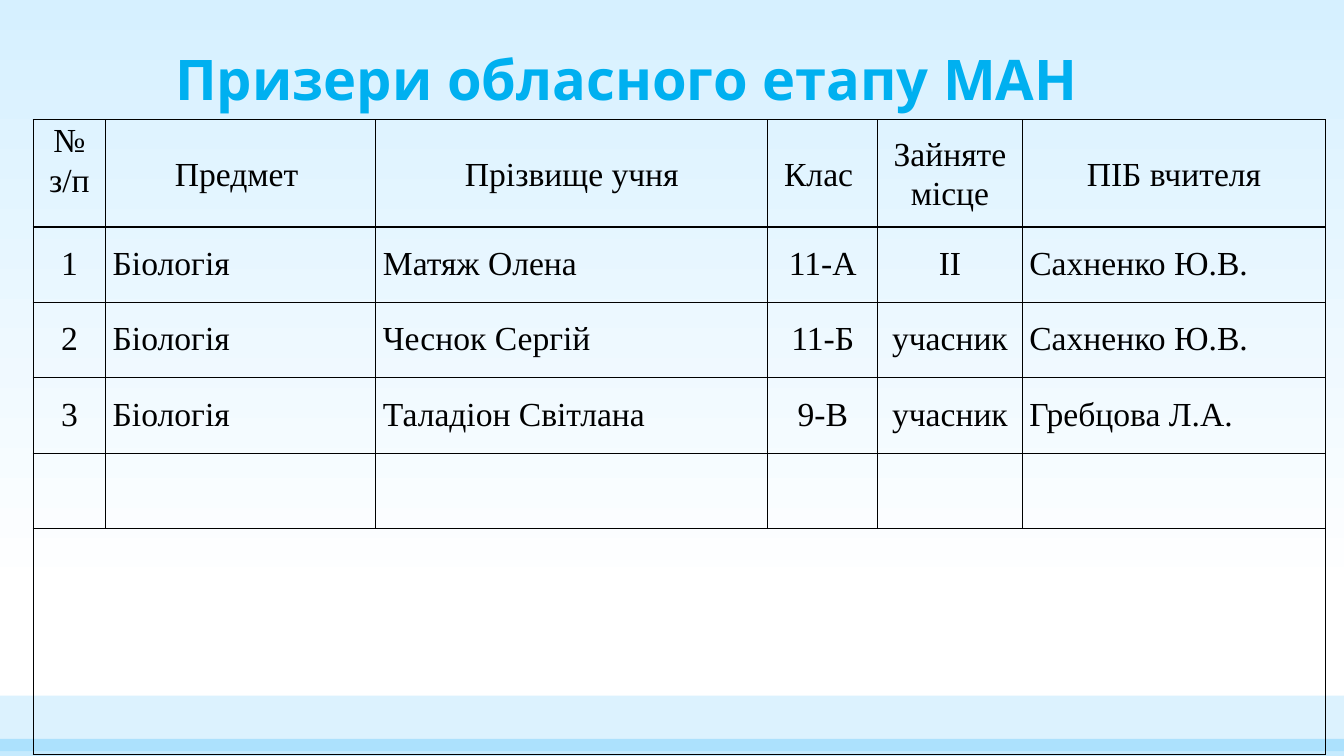
from lxml import etree
from pptx import Presentation
from pptx.dml.color import RGBColor
from pptx.enum import shapes, text
from pptx.oxml import ns
from pptx.util import Cm, Pt

SKY = RGBColor(0xD6, 0xF0, 0xFF)
WHITE = RGBColor(0xFF, 0xFF, 0xFF)
BAND_BLUE = RGBColor(0x31, 0xB6, 0xFD)
TITLE_BLUE = RGBColor(0x00, 0xB0, 0xF0)
BLACK = RGBColor(0x00, 0x00, 0x00)

CENTER, JUSTIFY = text.PP_ALIGN.CENTER, text.PP_ALIGN.JUSTIFY
COLUMN_WIDTHS = [1.82, 6.81, 9.88, 2.77, 3.64, 7.65]
ROW_HEIGHTS = [2.7, 1.9, 1.9, 1.9, 1.9, 5.7]
COLUMN_ALIGNMENTS = [CENTER, JUSTIFY, JUSTIFY, CENTER, CENTER, JUSTIFY]
HEADINGS = ["№ з/п", "Предмет ", "Прізвище учня", "Клас ", "Зайняте місце", "ПІБ вчителя"]
WINNERS = [
    ["1", "Біологія", "Матяж Олена", "11-А", "ІІ", "Сахненко Ю.В."],
    ["2", "Біологія", "Чеснок Сергій", "11-Б", "учасник", "Сахненко Ю.В."],
    ["3", "Біологія", "Таладіон Світлана", "9-В", "учасник", "Гребцова Л.А."],
]


def paint_background(page):
    fill = page.background.fill
    fill.gradient()
    fill.gradient_angle = 270
    for stop, color, position in zip(fill.gradient_stops, (SKY, WHITE), (0, 0.79)):
        stop.color.rgb = color
        stop.position = position


def add_band(page, left, top, width, height, opacity):
    band = page.shapes.add_shape(shapes.MSO_SHAPE.RECTANGLE, left, top, width, height)
    band.shadow.inherit = False
    band.line.fill.background()
    band.fill.solid()
    band.fill.fore_color.rgb = BAND_BLUE
    color = band.fill._xPr.find(".//" + ns.qn("a:srgbClr"))
    etree.SubElement(color, ns.qn("a:alpha"), val=str(opacity * 1000))


def add_title(page, left, top, width, height):
    box = page.shapes.add_textbox(left, top, width, height)
    frame = box.text_frame
    frame.word_wrap = True
    frame.vertical_anchor = text.MSO_ANCHOR.BOTTOM
    frame.text = "Призери обласного етапу МАН"
    para = frame.paragraphs[0]
    para.line_spacing = 0.9
    font = para.runs[0].font
    font.name, font.size, font.bold = "League Spartan", Pt(40), True
    font.color.rgb = TITLE_BLUE


def outline_cell(cell):
    cell.fill.background()
    properties = cell._tc.get_or_add_tcPr()
    # Border lines come before the fill
    for index, side in enumerate(("lnL", "lnR", "lnT", "lnB")):
        line = etree.Element(ns.qn("a:" + side), w=str(Pt(1)))
        solid = etree.SubElement(line, ns.qn("a:solidFill"))
        etree.SubElement(solid, ns.qn("a:srgbClr"), val=str(BLACK))
        properties.insert(index, line)


def write_cell(cell, words, alignment, spacing):
    cell.margin_left = cell.margin_right = Cm(0.18)
    cell.margin_top = cell.margin_bottom = 0
    cell.text_frame.text = words
    para = cell.text_frame.paragraphs[0]
    para.alignment = alignment
    para.line_spacing = spacing
    font = para.runs[0].font
    font.name, font.size = "Times New Roman", Pt(24)
    font.color.rgb = BLACK


def add_winners_table(page, left, top):
    width, height = Cm(sum(COLUMN_WIDTHS)), Cm(sum(ROW_HEIGHTS))
    table = page.shapes.add_table(
        len(ROW_HEIGHTS), len(COLUMN_WIDTHS), left, top, width, height).table
    table.first_row = table.horz_banding = False
    for column, size in zip(table.columns, COLUMN_WIDTHS):
        column.width = Cm(size)
    for row, size in zip(table.rows, ROW_HEIGHTS):
        row.height = Cm(size)
    for cell in table.iter_cells():
        outline_cell(cell)

    # Headings
    for index, heading in enumerate(HEADINGS):
        cell = table.cell(0, index)
        write_cell(cell, heading, CENTER, 1.07)
        if index > 0:
            cell.vertical_anchor = text.MSO_ANCHOR.MIDDLE

    # Winners
    for number, winner in enumerate(WINNERS, start=1):
        for index, (words, alignment) in enumerate(zip(winner, COLUMN_ALIGNMENTS)):
            write_cell(table.cell(number, index), words, alignment, 1.5)

    # Last row spans the full width
    last = len(ROW_HEIGHTS) - 1
    table.cell(last, 0).merge(table.cell(last, len(COLUMN_WIDTHS) - 1))


def main():
    deck = Presentation()
    deck.slide_width, deck.slide_height = Cm(33.87), Cm(19.05)
    page = deck.slides.add_slide(deck.slide_layouts[6])
    paint_background(page)
    add_band(page, 0, Cm(17.53), deck.slide_width, Cm(1.4), 17)
    add_band(page, 0, Cm(18.62), deck.slide_width, Cm(0.43), 28)
    add_title(page, Cm(4.17), Cm(0.71), Cm(26.42), Cm(2.26))
    add_winners_table(page, Cm(0.84), Cm(3.02))
    deck.save("out.pptx")


if __name__ == "__main__":
    main()
